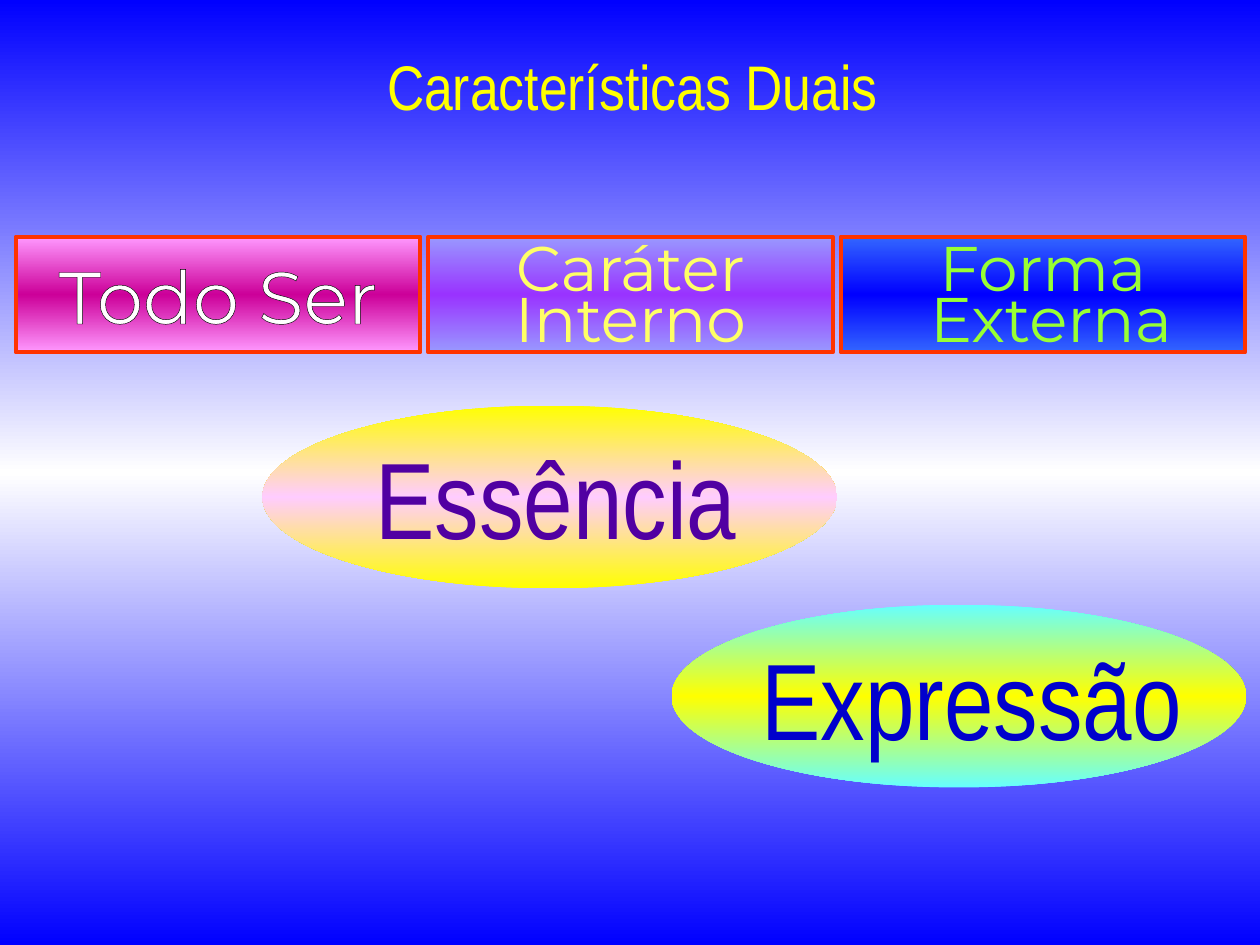
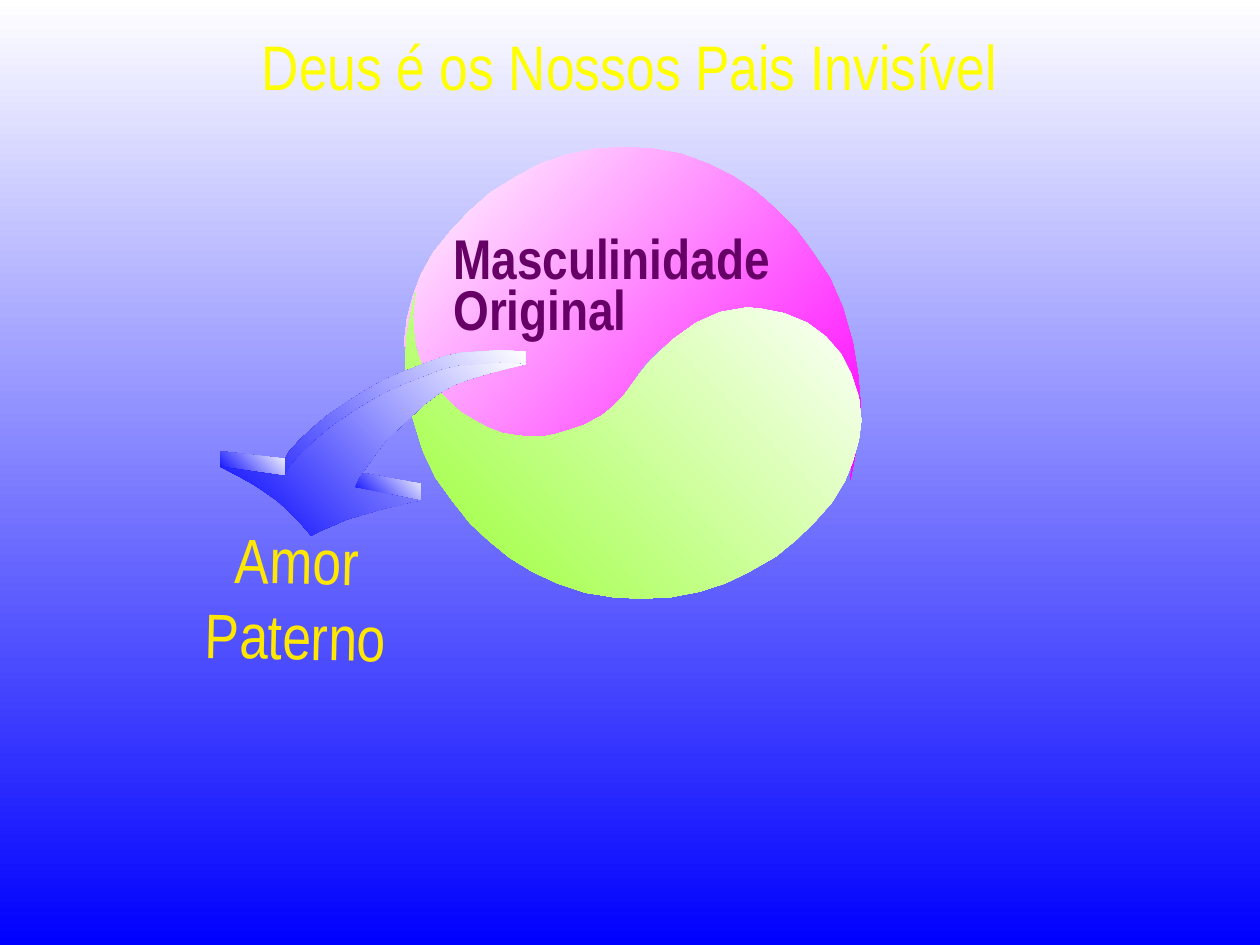
import copy

import pptx
import pptx.dml.color
import pptx.enum.shapes
import pptx.enum.text
import pptx.oxml.ns
import pptx.util
from lxml import etree

Pt = pptx.util.Pt
SHAPE = pptx.enum.shapes.MSO_SHAPE
ALIGN = pptx.enum.text.PP_ALIGN
ANCHOR = pptx.enum.text.MSO_ANCHOR
NARROW, WIDE = "Arial Narrow", "Montserrat"
BLUE, WHITE, YELLOW = "0000FF", "FFFFFF", "FFFF00"
RED_LINE, NAVY = "FF3300", "000099"

# Half of the circle, on a grid of 362 by 250
HALF_GRID = (362, 250)
HALF = [
    (158, 214), (167, 205), (174, 196), (188, 175), (197, 165), (206, 157), (220, 149),
    (231, 145), (243, 141), (253, 139), (264, 139), (273, 140), (285, 142), (297, 147),
    (307, 153), (318, 160), (329, 171), (337, 180), (343, 189), (348, 197), (351, 207),
    (354, 217), (355, 227), (356, 243), (354, 263), (357, 248), (361, 225), (362, 202),
    (360, 179), (356, 155), (348, 127), (338, 104), (324, 83), (310, 64), (295, 49),
    (279, 35), (261, 23), (241, 13), (219, 5), (196, 1), (175, 0), (152, 1), (128, 6),
    (108, 13), (89, 23), (68, 36), (51, 51), (36, 67), (23, 83), (13, 101), (7, 117),
    (2, 136), (0, 153), (2, 173), (8, 193), (16, 210), (28, 225), (43, 237), (61, 245),
    (80, 249), (91, 250), (112, 246), (131, 237), (149, 223),
]
# Curved arrow, on a grid of 242 by 133: both faces share the back and the head
ARROW_GRID = (242, 133)
ARROW = [
    (242, 1), (222, 0), (206, 1), (191, 2), (177, 5), (161, 11), (145, 17), (129, 24),
    (115, 32), (102, 40), (87, 50), (75, 60), (63, 71), (54, 81), (51, 87), (0, 80),
    (14, 87), (27, 94), (36, 100), (45, 106), (55, 115), (64, 124), (72, 133), (80, 129),
    (90, 125), (99, 121), (109, 118), (120, 115), (130, 112), (141, 110), (151, 107),
    (159, 106), (106, 96),
]
BACK_TAIL = [
    (110, 88), (121, 72), (130, 62), (143, 49), (154, 40), (162, 33), (174, 26),
    (184, 21), (198, 16), (213, 12), (221, 11), (242, 11),
]
FRONT_TAIL = [
    (110, 88), (122, 72), (130, 61), (143, 49), (154, 39), (163, 31), (174, 23),
    (185, 17), (199, 12), (213, 8), (229, 4),
]
RIGHT_BARB = [(52, 9), (52, 22), (0, 12), (1, 6), (4, 0)]
LEFT_BARB = [(0, 0), (0, 12), (51, 21), (51, 6)]


def rgb(color):
    return pptx.dml.color.RGBColor.from_string(color)


def gradient(fill, colors, angle=90):
    """Evenly spaced stops; the angle runs clockwise from left-to-right."""
    fill.gradient()
    first = fill.gradient_stops[0]._gs
    for _ in colors[2:]:
        first.addnext(copy.deepcopy(first))
    for i, (stop, color) in enumerate(zip(fill.gradient_stops, colors)):
        stop.color.rgb = rgb(color)
        stop.position = i / (len(colors) - 1)
    fill.gradient_angle = (360 - angle) % 360


def outline(r, color, width):
    """Draw a line around the letters of a run."""
    ln = etree.Element(pptx.oxml.ns.qn("a:ln"), w=str(int(Pt(width))))
    solid = etree.SubElement(ln, pptx.oxml.ns.qn("a:solidFill"))
    etree.SubElement(solid, pptx.oxml.ns.qn("a:srgbClr"), val=color)
    r._r.get_or_add_rPr().insert(0, ln)


def write(tf, lines, size, color, font=NARROW, bold=False, align=ALIGN.CENTER,
          spacing=(), edge=None, wrap=False, anchor=ANCHOR.TOP):
    tf.word_wrap = wrap
    tf.auto_size = pptx.enum.text.MSO_AUTO_SIZE.NONE
    tf.vertical_anchor = anchor
    for i, line in enumerate(lines):
        p = tf.paragraphs[0] if i == 0 else tf.add_paragraph()
        r = p.add_run()
        r.text = line
        p.alignment = align
        p.font.size, p.font.name, p.font.bold = Pt(size), font, bold
        p.font.color.rgb = rgb(color)
        if spacing:
            p.line_spacing = spacing[i]
        if edge:
            outline(r, *edge)


def text_box(s, box, lines, size, color, **style):
    sp = s.shapes.add_textbox(*map(Pt, box))
    write(sp.text_frame, lines, size, color, **style)
    return sp


def preset(s, kind, box, colors):
    sp = s.shapes.add_shape(kind, *map(Pt, box))
    sp.shadow.inherit = False
    gradient(sp.fill, colors)
    sp.line.fill.background()
    return sp


def traced(s, box, grid, points, colors, angle):
    """Closed outline whose grid is stretched over the box."""
    x, y, w, h = box
    spots = [(Pt(x + px * w / grid[0]), Pt(y + py * h / grid[1])) for px, py in points]
    builder = s.shapes.build_freeform(*spots[0], scale=1.0)
    builder.add_line_segments(spots[1:], close=True)
    sp = builder.convert_to_shape()
    sp.shadow.inherit = False
    gradient(sp.fill, colors, angle)
    sp.line.fill.background()


def new_slide(prs, title, box, background, edge_width):
    s = prs.slides.add_slide(prs.slide_layouts[5])
    gradient(s.background.fill, background)
    sp = s.shapes.title
    sp.left, sp.top, sp.width, sp.height = map(Pt, box)
    write(sp.text_frame, [title], 36, YELLOW, edge=(NAVY, edge_width))
    return s


def header_band(s, box, cells, gap):
    x, y, w, h = box
    cell_w = (w - gap * (len(cells) - 1)) / len(cells)
    for i, (lines, size, color, rim, middle) in enumerate(cells):
        cell = (x + i * (cell_w + gap), y, cell_w, h)
        sp = preset(s, SHAPE.RECTANGLE, cell, [rim, middle, rim])
        sp.line.color.rgb = rgb(RED_LINE)
        sp.line.width = Pt(2.25)
        spacing = (Pt(40), Pt(29)) if len(lines) > 1 else ()
        write(sp.text_frame, lines, size, color, font=WIDE, spacing=spacing,
              edge=("000000", 0.25), anchor=ANCHOR.MIDDLE)


def labelled_ellipse(s, box, rim, middle, label, color, label_box):
    x, y = box[:2]
    preset(s, SHAPE.OVAL, box, [rim, middle, rim])
    dx, dy, w, h = label_box
    text_box(s, (x + dx, y + dy, w, h), [label], 62, color, wrap=True)


def divided_circle(s, box):
    x, y, w, h = box
    turned = [(HALF_GRID[0] - px, HALF_GRID[1] - py) for px, py in HALF]
    traced(s, (x, y, w, 0.7 * h), HALF_GRID, HALF, [WHITE, "FF00FF"], 45)
    traced(s, (x + 0.5, y + 0.355 * h, w, 0.645 * h), HALF_GRID, turned,
           [WHITE, "99FF33"], 135)
    text_box(s, (x + 20.9, y + 49, 216, 65.5), ["Masculinidade Original"], 32, "660066",
             bold=True, align=ALIGN.LEFT, spacing=(0.75,), edge=(WHITE, 0.75), wrap=True)


def curved_arrow(s, box):
    x, y, w, h = box
    parts = [
        ((x, y, w, h), ARROW_GRID, ARROW + BACK_TAIL),
        ((x + 77, y + 69.8, 37.4, 15.8), (52, 22), RIGHT_BARB),
        ((x, y + 57.6, 36.7, 15.1), (51, 21), LEFT_BARB),
        ((x, y + 7.2, w, 1.03 * h), ARROW_GRID, ARROW + FRONT_TAIL),
    ]
    for part, grid, points in parts:
        traced(s, part, grid, points, [BLUE, WHITE], 315)


def dual_slide(prs):
    s = new_slide(prs, "Características Duais", (31.7, 23.8, 659.5, 80.6),
                  [BLUE, WHITE, BLUE], 2.25)
    header_band(s, (9, 135.2, 702.5, 66.2), [
        (["Todo Ser"], 42, WHITE, "FF99FF", "CC0099"),
        (["Caráter", "Interno"], 36, "FFFF66", "9999FF", "9933FF"),
        (["Forma", " Externa"], 36, "99FF33", "3366FF", BLUE),
    ], 4.5)
    labelled_ellipse(s, (150, 231.8, 328.3, 104.4), YELLOW, "FFCCFF",
                     "Essência", "5100A2", (42.2, 10.8, 251.3, 81.4))
    labelled_ellipse(s, (383.8, 345.6, 328.3, 104.4), "66FFFF", YELLOW,
                     " Expressão", "0000CC", (18, 12.2, 293, 81.4))


def parents_slide(prs):
    s = new_slide(prs, "Deus é os Nossos Pais Invisível", (23.8, 12.2, 671.8, 49.7),
                  [WHITE, BLUE], 3)
    divided_circle(s, (231.1, 84.2, 260.6, 257.8))
    curved_arrow(s, (126, 200.2, 174.2, 95.8))
    sp = text_box(s, (30.2, 294.5, 275.8, 218.9), ["Amor", "Paterno"], 36, "FFE701",
                  edge=("000000", 0.25))
    sp.rotation = 1.2


def main():
    prs = pptx.Presentation()
    prs.slide_width, prs.slide_height = Pt(720), Pt(540)
    dual_slide(prs)
    parents_slide(prs)
    prs.save("out.pptx")


if __name__ == "__main__":
    main()
